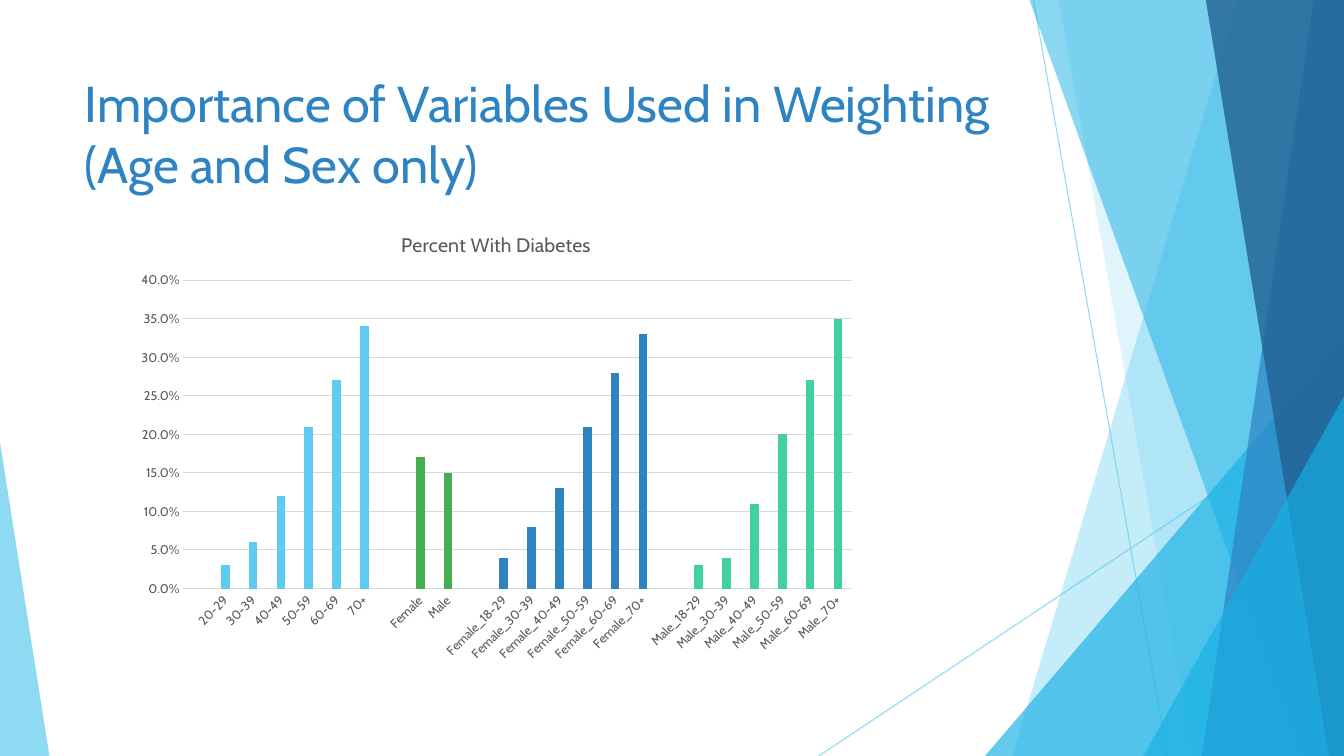
from dataclasses import dataclass

import lxml.etree
import pptx
import pptx.chart.data
import pptx.dml.color
import pptx.dml.fill
import pptx.enum.chart
import pptx.enum.shapes
import pptx.enum.text
import pptx.oxml
import pptx.oxml.ns
import pptx.util

Inches = pptx.util.Inches
Pt = pptx.util.Pt
qn = pptx.oxml.ns.qn

FONT = "Cabin"
WIDTH, HEIGHT = 13.33, 7.5
CHART_WIDTH, CHART_HEIGHT = 7.34, 4.55
COLORS = {
    "sky": "5FCBEF", "cyan": "17B0E4", "blue": "2E83C3", "navy": "226292",
    "green": "42B051", "mint": "42D0A2", "text": "595959", "grid": "D9D9D9",
}


@dataclass(frozen=True)
class Ray:
    start: tuple[float, float]
    end: tuple[float, float]


@dataclass(frozen=True)
class Band:
    """A panel reaching the right edge, with a slanted left side."""
    top_left: float
    bottom_left: float
    color: str
    opacity: int


@dataclass(frozen=True)
class Triangle:
    left: float
    top: float
    width: float
    apex: float
    color: str
    opacity: int


@dataclass(frozen=True)
class BarGroup:
    color: str
    labels: list[str]
    values: list[float]


AGES = ["30-39", "40-49", "50-59", "60-69", "70+"]
RAYS = [Ray((10.25, 0), (11.58, HEIGHT)), Ray((WIDTH, 4.03), (8.12, HEIGHT))]
DECORATIONS = [
    Band(12.28, 10.04, "sky", 36),
    Band(10.5, 11.83, "sky", 20),
    Triangle(9.77, 3.33, 3.56, 1, "cyan", 66),
    Band(10.21, 12.91, "cyan", 50),
    Band(13.03, 11.92, "blue", 70),
    Band(11.96, 13.18, "navy", 80),
    Triangle(11.34, 3.93, 1.99, 1, "cyan", 66),
    Triangle(0, 4.39, 0.49, 0, "sky", 70),
]
BAR_GROUPS = [
    BarGroup("sky", ["20-29", *AGES], [0.03, 0.06, 0.12, 0.21, 0.27, 0.34]),
    BarGroup("green", ["Female", "Male"], [0.17, 0.15]),
    BarGroup("blue", [f"Female_{age}" for age in ["18-29", *AGES]],
             [0.04, 0.08, 0.13, 0.21, 0.28, 0.33]),
    BarGroup("mint", [f"Male_{age}" for age in ["18-29", *AGES]],
             [0.03, 0.04, 0.11, 0.2, 0.27, 0.35]),
]


def rgb(name: str) -> pptx.dml.color.RGBColor:
    return pptx.dml.color.RGBColor.from_string(COLORS[name])


def set_solid(fill: pptx.dml.fill.FillFormat, color: str) -> None:
    fill.solid()
    fill.fore_color.rgb = rgb(color)


def set_opacity(properties, percent: int) -> None:
    """Add an alpha value to the first colour of a shape's properties."""
    color = next(properties.iter(qn("a:srgbClr")))
    lxml.etree.SubElement(color, qn("a:alpha")).set("val", str(percent * 1000))


def set_font(font, size: float, color: str) -> None:
    font.name = FONT
    font.size = Pt(size)
    font.bold = False
    font.color.rgb = rgb(color)


def draw_ray(slide, ray: Ray) -> None:
    connector = slide.shapes.add_connector(
        pptx.enum.shapes.MSO_CONNECTOR.STRAIGHT,
        *(Inches(value) for value in (*ray.start, *ray.end)))
    connector.line.width = Pt(0.75)
    connector.line.color.rgb = rgb("sky")
    properties = connector._element.spPr
    set_opacity(properties, 70)
    lxml.etree.SubElement(properties, qn("a:effectLst"))


def draw_decoration(slide, item: Band | Triangle) -> None:
    if isinstance(item, Band):
        builder = slide.shapes.build_freeform(Inches(item.top_left), 0)
        corners = [(WIDTH, 0), (WIDTH, HEIGHT), (item.bottom_left, HEIGHT)]
        builder.add_line_segments([(Inches(x), Inches(y)) for x, y in corners])
        shape = builder.convert_to_shape()
    else:
        shape = slide.shapes.add_shape(
            pptx.enum.shapes.MSO_SHAPE.ISOSCELES_TRIANGLE,
            Inches(item.left), Inches(item.top),
            Inches(item.width), Inches(HEIGHT - item.top))
        shape.adjustments[0] = item.apex
    shape.shadow.inherit = False
    shape.line.fill.background()
    set_solid(shape.fill, item.color)
    set_opacity(shape._element.spPr, item.opacity)


def write_title(slide) -> None:
    title = slide.shapes.title
    title.left, title.top = Inches(0.74), Inches(0.67)
    title.width, title.height = Inches(9.4), Inches(1.44)
    frame = title.text_frame
    frame.text = "Importance of Variables Used in Weighting (Age and Sex only)"
    frame.word_wrap = True
    frame.auto_size = pptx.enum.text.MSO_AUTO_SIZE.NONE
    frame.vertical_anchor = pptx.enum.text.MSO_ANCHOR.TOP
    paragraph = frame.paragraphs[0]
    paragraph.alignment = pptx.enum.text.PP_ALIGN.LEFT
    set_font(paragraph.runs[0].font, 36, "blue")


def set_plot_layout(chart, left: float, top: float, width: float, height: float) -> None:
    """Fix the inner plot area, in inches from the chart's corner."""
    plot_area = next(chart._chartSpace.iter(qn("c:plotArea")))
    for old_layout in plot_area.findall(qn("c:layout")):
        plot_area.remove(old_layout)
    layout = lxml.etree.Element(qn("c:layout"))
    manual = lxml.etree.SubElement(layout, qn("c:manualLayout"))
    settings = {"layoutTarget": "inner", "xMode": "edge", "yMode": "edge",
                "x": left / CHART_WIDTH, "y": top / CHART_HEIGHT,
                "w": width / CHART_WIDTH, "h": height / CHART_HEIGHT}
    for name, value in settings.items():
        lxml.etree.SubElement(manual, qn(f"c:{name}")).set("val", str(value))
    plot_area.insert(0, layout)


def format_axes(chart) -> None:
    for axis in (chart.category_axis, chart.value_axis):
        axis.major_tick_mark = pptx.enum.chart.XL_TICK_MARK.NONE
        axis.minor_tick_mark = pptx.enum.chart.XL_TICK_MARK.NONE
        set_font(axis.tick_labels.font, 9, "text")
    category_axis, value_axis = chart.category_axis, chart.value_axis
    body = next(category_axis._element.iter(qn("a:bodyPr")))
    body.set("rot", str(-45 * 60000))
    value_axis.minimum_scale, value_axis.maximum_scale = 0, 0.4
    value_axis.major_unit = 0.05
    value_axis.tick_labels.number_format = "0.0%"
    value_axis.tick_labels.number_format_is_linked = False
    value_axis.format.line.fill.background()
    for line in (category_axis.format.line, value_axis.major_gridlines.format.line):
        line.width = Pt(0.75)
        line.color.rgb = rgb("grid")


def draw_chart(slide) -> None:
    heading = "Percent With Diabetes"
    labels, values, colors = [], [], []
    for group in BAR_GROUPS:
        labels += ["", *group.labels]
        values += [None, *group.values]
        colors += [None, *[group.color] * len(group.values)]
    data = pptx.chart.data.CategoryChartData(number_format="0.0%")
    data.categories = labels
    data.add_series(heading, values)
    chart = slide.shapes.add_chart(
        pptx.enum.chart.XL_CHART_TYPE.COLUMN_CLUSTERED,
        Inches(1.25), Inches(2.11), Inches(CHART_WIDTH), Inches(CHART_HEIGHT), data).chart
    set_font(chart.font, 10, "text")
    chart.has_legend = False
    chart.has_title = True
    chart.chart_title.include_in_layout = False
    chart.chart_title.text_frame.text = heading
    set_font(chart.chart_title.text_frame.paragraphs[0].runs[0].font, 14, "text")
    plot = chart.plots[0]
    plot.vary_by_categories = False
    plot.gap_width, plot.overlap = 219, -27
    series = plot.series[0]
    set_solid(series.format.fill, "sky")
    for index, color in enumerate(colors):
        if color not in (None, "sky"):
            set_solid(series.points[index].format.fill, color)
    format_axes(chart)
    set_plot_layout(chart, 0.57, 0.67, 6.63, 3.06)


def main() -> None:
    presentation = pptx.Presentation()
    presentation.slide_width, presentation.slide_height = Inches(WIDTH), Inches(HEIGHT)
    slide = presentation.slides.add_slide(presentation.slide_layouts[5])
    for ray in RAYS:
        draw_ray(slide, ray)
    for item in DECORATIONS:
        draw_decoration(slide, item)
    write_title(slide)
    draw_chart(slide)
    presentation.save("out.pptx")


if __name__ == "__main__":
    main()
